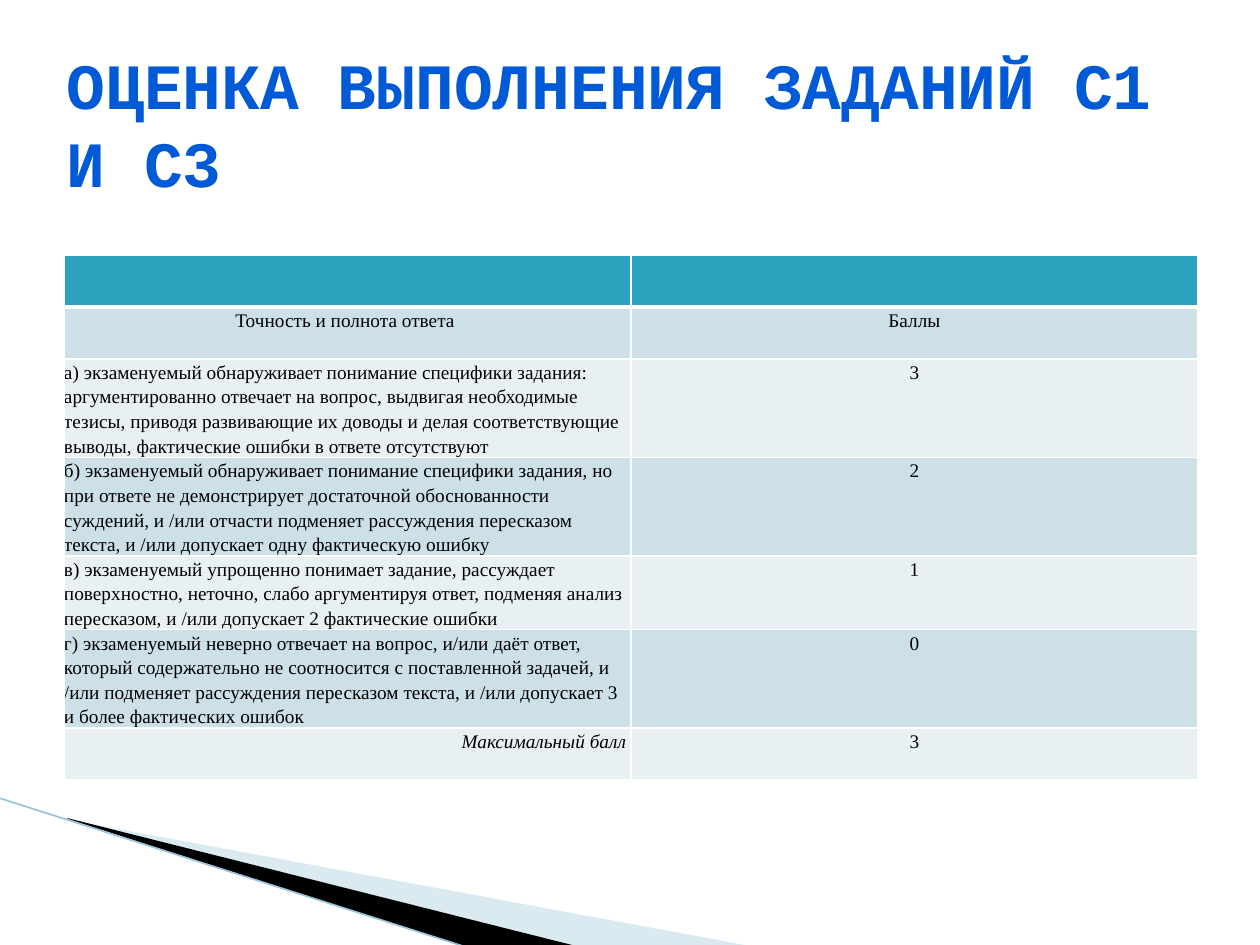
from lxml import etree
from pptx import Presentation
from pptx import util as u
from pptx.dml.color import RGBColor
from pptx.enum import shapes, text
from pptx.oxml import ns

PX = 914400 / 126
WHITE = RGBColor(0xFF, 0xFF, 0xFF)
BLACK = RGBColor(0, 0, 0)
TITLE_BLUE = RGBColor(0x00, 0x5A, 0xD6)
HEADER_TEAL = RGBColor(0x2D, 0xA2, 0xBF)
BAND_DARK = RGBColor(0xCD, 0xE0, 0xE8)
BAND_LIGHT = RGBColor(0xE8, 0xF0, 0xF4)
WEDGE_BLUE = RGBColor(0xA0, 0xCB, 0xDC)
LINE_BLUE = RGBColor(0x97, 0xC5, 0xD8)

LEFT, CENTER, RIGHT = text.PP_ALIGN.LEFT, text.PP_ALIGN.CENTER, text.PP_ALIGN.RIGHT


def px(count):
    return u.Emu(int(count * PX))


def add_border(cell, side, points):
    border = etree.SubElement(cell._tc.get_or_add_tcPr(), ns.qn("a:" + side), w=str(u.Pt(points)))
    fill = etree.SubElement(border, ns.qn("a:solidFill"))
    etree.SubElement(fill, ns.qn("a:srgbClr"), val=str(WHITE))


deck = Presentation()
deck.slide_width, deck.slide_height = px(1260), px(945)
page = deck.slides.add_slide(deck.slide_layouts[5])

wedges = [
    ([(69, 820), (750, 946), (575, 946), (69, 819)], WEDGE_BLUE, 40),
    ([(67, 818), (576, 946), (469, 948), (68, 819)], BLACK, 100),
]
for points, color, opacity in wedges:
    outline = page.shapes.build_freeform(*points[0], scale=PX)
    outline.add_line_segments(points[1:], close=True)
    wedge = outline.convert_to_shape()
    wedge.shadow.inherit = False
    wedge.line.fill.background()
    wedge.fill.solid()
    wedge.fill.fore_color.rgb = color
    if opacity < 100:
        tint = wedge.fill._xPr.find(".//" + ns.qn("a:srgbClr"))
        etree.SubElement(tint, ns.qn("a:alpha"), val=str(opacity * 1000))

edge = page.shapes.add_connector(shapes.MSO_CONNECTOR.STRAIGHT, px(-1), px(798), px(469), px(948))
edge.line.color.rgb = LINE_BLUE
edge.line.width = u.Pt(0.95)
etree.SubElement(edge._element.spPr, ns.qn("a:effectLst"))

rows = [
    ("", "", LEFT),
    ("Точность и полнота ответа ", "Баллы", CENTER),
    ("а) экзаменуемый обнаруживает понимание специфики задания: аргументированно отвечает на вопрос, "
     "выдвигая необходимые тезисы, приводя развивающие их доводы и делая соответствующие выводы, "
     "фактические ошибки в ответе отсутствуют", "3", LEFT),
    ("б) экзаменуемый обнаруживает понимание специфики задания, но при ответе не демонстрирует "
     "достаточной обоснованности суждений, и /или отчасти подменяет рассуждения пересказом текста, "
     "и /или допускает одну фактическую ошибку", "2", LEFT),
    ("в) экзаменуемый упрощенно понимает задание, рассуждает поверхностно, неточно, слабо "
     "аргументируя ответ, подменяя анализ пересказом, и /или допускает 2 фактические ошибки", "1", LEFT),
    ("г) экзаменуемый неверно отвечает на вопрос, и/или даёт ответ, который содержательно не "
     "соотносится с поставленной задачей, и /или подменяет рассуждения пересказом текста, "
     "и /или допускает 3 и более фактических ошибок", "0", LEFT),
    ("Максимальный балл ", "3", RIGHT),
]
table = page.shapes.add_table(len(rows), 2, px(64), px(255), px(1134), px(52 * len(rows))).table
for index, (criterion, score, alignment) in enumerate(rows):
    for column, (wording, align) in enumerate([(criterion, alignment), (score, CENTER)]):
        cell = table.cell(index, column)
        add_border(cell, "lnL", 1)
        add_border(cell, "lnR", 1)
        add_border(cell, "lnT", 3 if index == 1 else 1)
        add_border(cell, "lnB", 3 if index == 0 else 1)
        cell.fill.solid()
        cell.fill.fore_color.rgb = HEADER_TEAL if index == 0 else BAND_DARK if index % 2 else BAND_LIGHT
        if not wording:
            continue
        cell.margin_left = cell.margin_right = cell.margin_top = cell.margin_bottom = 0
        para = cell.text_frame.paragraphs[0]
        para.text = wording
        para.alignment = align
        para.line_spacing = 1.15
        para.space_after = u.Pt(10)
        font = para.runs[0].font
        font.name = "Times New Roman"
        font.size = u.Pt(11)
        font.bold = False
        font.italic = align == RIGHT
        font.color.rgb = BLACK

title = page.shapes.title
title.left, title.top, title.width, title.height = px(54), px(76), px(1134), px(157)
frame = title.text_frame
frame.text = "ОЦЕНКА ВЫПОЛНЕНИЯ ЗАДАНИЙ С1 И С3"
frame.word_wrap = True
frame.auto_size = text.MSO_AUTO_SIZE.NONE
frame.vertical_anchor = text.MSO_ANCHOR.MIDDLE
frame.margin_bottom = px(70)
para = frame.paragraphs[0]
para.alignment = LEFT
font = para.runs[0].font
font.name = "Courier New"
font.size = u.Pt(36.9)
font.bold = True
font.color.rgb = TITLE_BLUE

deck.save("out.pptx")
